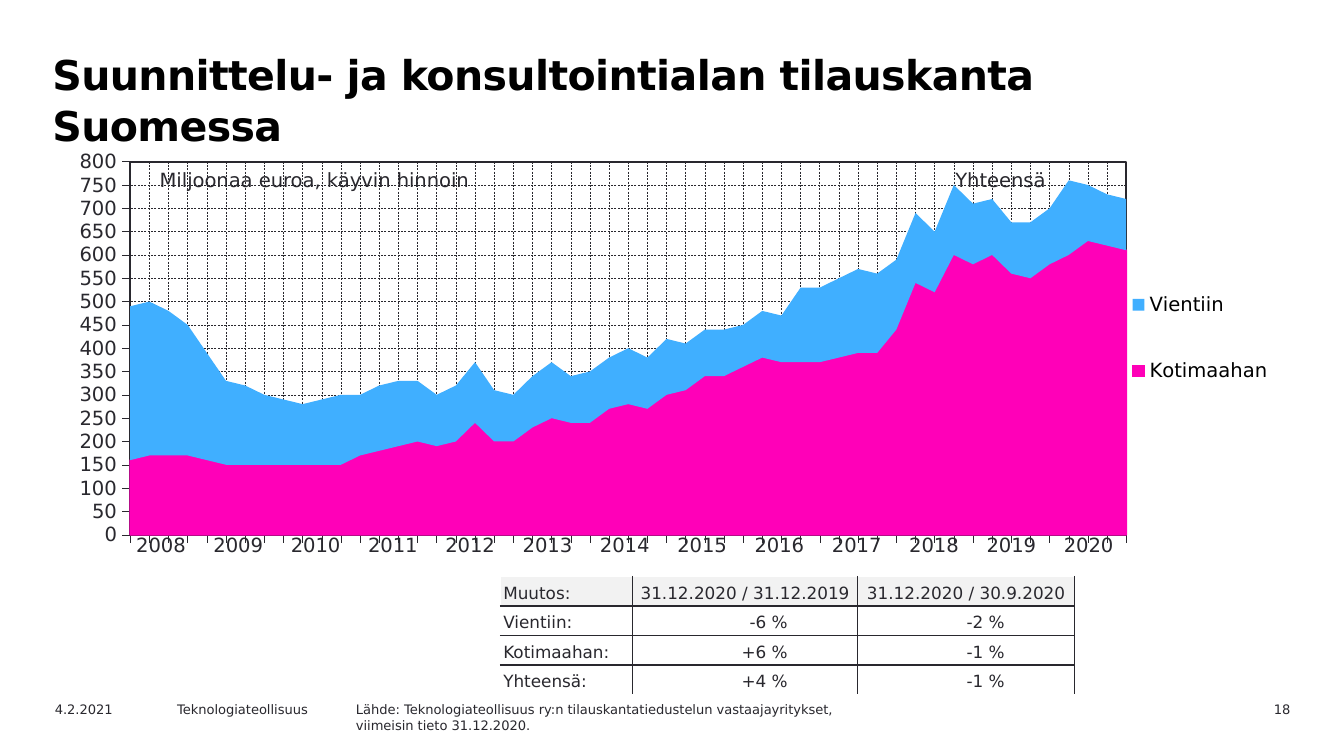
import pptx
import pptx.chart.data
import pptx.dml.color
import pptx.enum.chart
import pptx.enum.dml
import pptx.enum.text
import pptx.oxml
import pptx.oxml.ns
import pptx.util

ALIGN = pptx.enum.text.PP_ALIGN
TICK = pptx.enum.chart.XL_TICK_MARK
HOME = [
    160, 170, 170, 170, 160, 150, 150, 150, 150, 150, 150, 150, 170, 180,
    190, 200, 190, 200, 240, 200, 200, 230, 250, 240, 240, 270, 280, 270,
    300, 310, 340, 340, 360, 380, 370, 370, 370, 380, 390, 390, 440, 540,
    520, 600, 580, 600, 560, 550, 580, 600, 630, 620, 610]
AWAY = [
    330, 330, 310, 280, 230, 180, 170, 150, 140, 130, 140, 150, 130, 140,
    140, 130, 110, 120, 130, 110, 100, 110, 120, 100, 110, 110, 120, 110,
    120, 100, 100, 100, 90, 100, 100, 160, 160, 170, 180, 170, 150, 150,
    130, 150, 130, 120, 110, 120, 120, 160, 120, 110, 110]
ROWS = [
    ["Muutos:", "31.12.2020 / 31.12.2019", "31.12.2020 / 30.9.2020"],
    ["Vientiin:", "-6 %", "-2 %"],
    ["Kotimaahan:", "+6 %", "-1 %"],
    ["Yhteensä:", "+4 %", "-1 %"]]


def tint(code):
    return pptx.dml.color.RGBColor.from_string(code)


def node(tag, body, more=""):
    space = pptx.oxml.ns.nsdecls("a", "c")
    return pptx.oxml.parse_xml(f"<{tag} {space} {more}>{body}</{tag}>")


def place(host, spot, box, inner=False):
    for old in host.findall(pptx.oxml.ns.qn("c:layout")):
        host.remove(old)
    body = '<c:layoutTarget val="inner"/>' if inner else ""
    body += '<c:xMode val="edge"/><c:yMode val="edge"/>'
    body += "".join(f'<c:{key} val="{val}"/>' for key, val in zip("xywh", box))
    host.insert(spot, node("c:layout", f"<c:manualLayout>{body}</c:manualLayout>"))


class Deck:
    """Holds the style and the current slide, measured on a grid of tenths of an inch."""
    face, ink, pale, white = "DejaVu Sans", "29282E", "F2F2F2", "FFFFFF"
    unit = pptx.util.Inches(0.1)

    def __init__(self, cols, rows):
        self.show = pptx.Presentation()
        self.show.slide_width, self.show.slide_height = self.span(cols, rows)
        self.slide = self.show.slides.add_slide(self.show.slide_layouts[5])

    def span(self, *sizes):
        return [round(size * self.unit) for size in sizes]

    def font(self, font, size, color=None, bold=False):
        font.name, font.size, font.bold = self.face, pptx.util.Pt(size), bold
        font.color.rgb = tint(color or self.ink)

    def line(self, line, width, color=None):
        line.color.rgb, line.width = tint(color or self.ink), pptx.util.Pt(width)

    def title(self, box, text):
        head = self.slide.shapes.title
        head.left, head.top, head.width, head.height = self.span(*box)
        frame = head.text_frame
        frame.text, frame.word_wrap = text, True
        frame.vertical_anchor = pptx.enum.text.MSO_ANCHOR.TOP
        frame.auto_size = pptx.enum.text.MSO_AUTO_SIZE.NONE
        frame.margin_left = self.span(1.1)[0]
        para = frame.paragraphs[0]
        para.alignment, para.line_spacing = ALIGN.LEFT, pptx.util.Pt(27)
        para.space_before = pptx.util.Pt(0)
        para.runs[0].font._element.set("spc", "-30")
        self.font(para.runs[0].font, 22, "000000", True)

    def text(self, box, text, size, align=ALIGN.LEFT, wrap=True):
        frame = self.slide.shapes.add_textbox(*self.span(*box)).text_frame
        frame.text, frame.word_wrap = text, wrap
        for para in frame.paragraphs:
            para.alignment = align
            self.font(para.font, size)

    def chart(self, box, series):
        data = pptx.chart.data.CategoryChartData(number_format="#,##0")
        data.categories = [str(n + 1) for n in range(len(HOME))]
        for name, vals, _ in series:
            data.add_series(name, vals)
        kind = pptx.enum.chart.XL_CHART_TYPE.AREA_STACKED
        chart = self.slide.shapes.add_chart(kind, *self.span(*box), data).chart
        chart.has_title = False
        self.font(chart.font, 10.5)
        chart.plots[0].vary_by_categories = False
        for item, (_, _, color) in zip(chart.plots[0].series, series):
            item.format.fill.solid()
            item.format.fill.fore_color.rgb = tint(color)
            item.format.line.fill.background()
        self.line(chart.plots[0].series[0].format.line, 0.88, series[0][2])
        for axis in (chart.category_axis, chart.value_axis):
            axis.major_tick_mark, axis.minor_tick_mark = TICK.OUTSIDE, TICK.NONE
            axis.has_major_gridlines = True
            self.line(axis.format.line, 0.22)
            self.line(axis.major_gridlines.format.line, 0.25)
            axis.major_gridlines.format.line.dash_style = pptx.enum.dml.MSO_LINE.DASH
        chart.category_axis.tick_label_position = pptx.enum.chart.XL_TICK_LABEL_POSITION.NONE
        axis = chart.value_axis
        axis.minimum_scale, axis.maximum_scale, axis.major_unit = 0, 800, 50
        axis.tick_labels.number_format = "#,##0"
        axis.tick_labels.number_format_is_linked = False
        self.font(axis.tick_labels.font, 10.5)
        axis._element.find(pptx.oxml.ns.qn("c:crossBetween")).set("val", "midCat")
        chart.has_legend = True
        chart.legend.position = pptx.enum.chart.XL_LEGEND_POSITION.RIGHT
        chart.legend.include_in_layout = False
        self.font(chart.legend.font, 10.5, "000000")
        place(chart.legend._element, 1, (0.87, 0.24, 0.12, 0.42))
        area = chart._chartSpace.chart.plotArea
        place(area, 0, (0.06, 0.03, 0.81, 0.89), True)
        fill = f'<a:solidFill><a:srgbClr val="{self.ink}"/></a:solidFill>'
        area.append(node("c:spPr", f'<a:noFill/><a:ln w="12700">{fill}</a:ln>'))

    def table(self, box, rows, cols):
        grid = self.slide.shapes.add_table(len(rows), len(cols), *self.span(*box)).table
        grid.first_row = grid.horz_banding = False
        style = grid._tbl.tblPr.find(pptx.oxml.ns.qn("a:tableStyleId"))
        style.text = "{2D5ABB26-0587-4C30-8999-92F81FD0307C}"
        for col, width in zip(grid.columns, self.span(*cols)):
            col.width = width
        for r, row in enumerate(rows):
            for c, text in enumerate(row):
                cell = grid.cell(r, c)
                cell.text = text
                cell.fill.background()
                yield r, c, cell, cell.text_frame.paragraphs[0]

    def years(self, box, names):
        for _, _, _, para in self.table(box, [names], [box[2] / len(names)] * len(names)):
            para.alignment = ALIGN.CENTER
            self.font(para.font, 10.5)

    def change(self, box, rows, cols):
        for r, c, cell, para in self.table(box, rows, cols):
            value = r > 0 and c > 0
            cell.vertical_anchor = pptx.enum.text.MSO_ANCHOR.BOTTOM
            cell.margin_left = cell.margin_top = cell.margin_bottom = self.span(0.2)[0]
            cell.margin_right = self.span(5.2 if value else 0.2)[0]
            para.alignment = ALIGN.RIGHT if value else ALIGN.CENTER if c else ALIGN.LEFT
            self.font(para.font, 9)
            if r == 0:
                cell.fill.solid()
                cell.fill.fore_color.rgb = tint(self.pale)
            sides = {"L": c == 0, "R": False, "T": r == 0, "B": r == len(rows) - 1}
            for spot, (side, plain) in enumerate(sides.items()):
                color = self.white if plain else self.ink
                body = f'<a:solidFill><a:srgbClr val="{color}"/></a:solidFill>'
                cell._tc.tcPr.insert(spot, node(f"a:ln{side}", body, 'w="12700"'))


def main():
    deck = Deck(100, 56.25)
    deck.title((2.8, 3.1, 87.4, 7.1), "Suunnittelu- ja konsultointialan tilauskanta Suomessa")
    deck.text((87.6, 51.7, 9.4, 1.8), "18", 7, ALIGN.RIGHT)
    deck.text((3.1, 51.7, 10, 1.8), "4.2.2021", 7)
    deck.text((12.2, 51.7, 14.2, 1.8), "Teknologiateollisuus", 7)
    deck.text((25.5, 51.7, 50, 2.6),
              "Lähde: Teknologiateollisuus ry:n tilauskantatiedustelun vastaajayritykset,\n"
              "viimeisin tieto 31.12.2020.", 7)
    deck.chart((4.2, 11.1, 91.5, 31.2),
               [("Kotimaahan", HOME, "FF00B8"), ("Vientiin", AWAY, "40AFFF")])
    deck.text((10.9, 12, 26, 2.7), "Miljoonaa euroa, käyvin hinnoin", 10.5, wrap=False)
    deck.change((37.25, 42.9, 42.7, 8.8), ROWS, [9.8, 16.75, 16.15])
    deck.text((70.1, 12, 10.6, 2.7), "Yhteensä", 10.5)
    deck.years((9.1, 39.25, 74.8, 3.1), [str(year) for year in range(2008, 2021)])
    deck.show.save("out.pptx")


if __name__ == "__main__":
    main()
